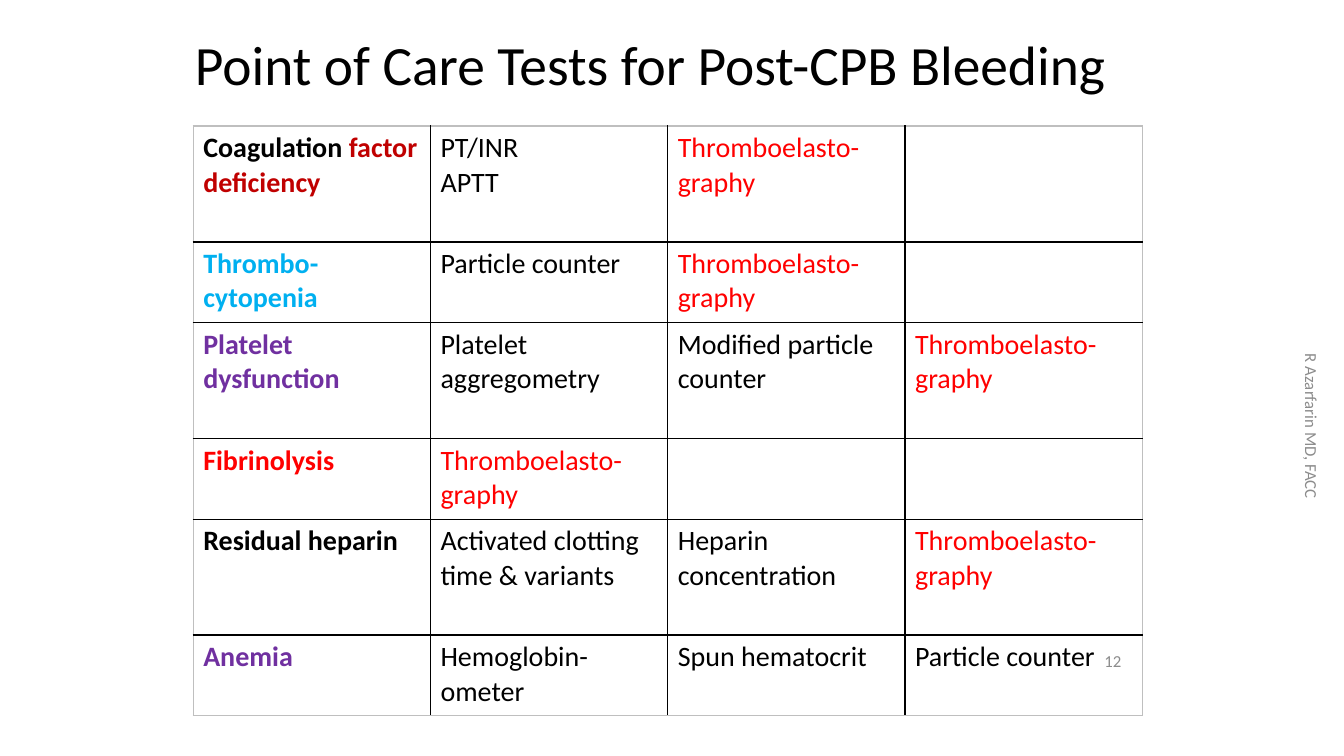
from lxml.etree import SubElement
from pptx import Presentation
from pptx.dml.color import RGBColor
from pptx.enum.text import MSO_ANCHOR, PP_ALIGN
from pptx.oxml.ns import qn
from pptx.util import Pt

BLACK = RGBColor(0x00, 0x00, 0x00)
RED = RGBColor(0xFF, 0x00, 0x00)
DARK_RED = RGBColor(0xC0, 0x00, 0x00)
BLUE = RGBColor(0x00, 0xB0, 0xF0)
PURPLE = RGBColor(0x70, 0x30, 0xA0)
GREY = RGBColor(0x8C, 0x8C, 0x8C)
EDGE = RGBColor(0xBF, 0xBF, 0xBF)

TEG = "Thromboelasto-graphy"
TESTS = [
    ([("Coagulation ", BLACK), ("factor deficiency", DARK_RED)], ["PT/INR\nAPTT", TEG, ""]),
    ([("Thrombo-cytopenia", BLUE)], ["Particle counter", TEG, ""]),
    ([("Platelet dysfunction", PURPLE)],
     ["Platelet aggregometry", "Modified particle counter", TEG]),
    ([("Fibrinolysis", RED)], [TEG, "", ""]),
    ([("Residual heparin", BLACK)],
     ["Activated clotting time & variants", "Heparin concentration", TEG]),
    ([("Anemia", PURPLE)], ["Hemoglobin-ometer", "Spun hematocrit", "Particle counter"]),
]
ROW_HEIGHTS = [82.8, 57.6]
COL_WIDTH = 169.5


def style_font(font, size, color, bold=False):
    for name, value in {"name": "Calibri", "size": Pt(size), "bold": bold}.items():
        setattr(font, name, value)
    font.color.rgb = color


def place(sp, x, y, w, h):
    for name, value in {"left": x, "top": y, "width": w, "height": h}.items():
        setattr(sp, name, Pt(value))


def add_title(s, text, x, y, w, h):
    sp = s.shapes.title
    place(sp, x, y, w, h)
    tf = sp.text_frame
    tf.text = text
    tf.vertical_anchor = MSO_ANCHOR.MIDDLE
    p = tf.paragraphs[0]
    p.alignment = PP_ALIGN.LEFT
    p.line_spacing = 0.9
    style_font(p.runs[0].font, 39.6, BLACK)


def add_label(s, text, x, y, w, h, align, rotation=0):
    sp = s.shapes.add_textbox(Pt(x), Pt(y), Pt(w), Pt(h))
    sp.rotation = rotation
    tf = sp.text_frame
    tf.word_wrap = True
    tf.vertical_anchor = MSO_ANCHOR.MIDDLE
    p = tf.paragraphs[0]
    p.alignment = align
    r = p.add_run()
    r.text = text
    style_font(r.font, 12, GREY)


def set_borders(cell, row, col, rows, cols):
    tcPr = cell._tc.get_or_add_tcPr()
    outer = {"lnL": col == 0, "lnR": col == cols - 1, "lnT": row == 0, "lnB": row == rows - 1}
    for side, is_edge in outer.items():
        ln = SubElement(tcPr, qn(f"a:{side}"), w=str(Pt(1)))
        fill = SubElement(ln, qn("a:solidFill"))
        SubElement(fill, qn("a:srgbClr"), val=str(EDGE if is_edge else BLACK))


def fill_cell(cell, paragraphs, bold):
    tf = cell.text_frame
    for i, runs in enumerate(paragraphs):
        p = tf.paragraphs[0] if i == 0 else tf.add_paragraph()
        for text, color in runs:
            r = p.add_run()
            r.text = text
            style_font(r.font, 20, color, bold)


def add_test_table(s, x, y):
    rows, cols = len(TESTS), 4
    heights = [ROW_HEIGHTS[i % 2] for i in range(rows)]
    frame = s.shapes.add_table(rows, cols, Pt(x), Pt(y), Pt(COL_WIDTH * cols), Pt(sum(heights)))
    table = frame.table
    table.first_row = table.horz_banding = False
    for column in table.columns:
        column.width = Pt(COL_WIDTH)
    for i, (problem, tests) in enumerate(TESTS):
        table.rows[i].height = Pt(heights[i])
        fill_cell(table.cell(i, 0), [problem], True)
        for j, test in enumerate(tests, 1):
            color = RED if test == TEG else BLACK
            if test:
                fill_cell(table.cell(i, j), [[(line, color)] for line in test.split("\n")], False)
        for j in range(cols):
            cell = table.cell(i, j)
            set_borders(cell, i, j, rows, cols)
            cell.fill.background()


def main():
    prs = Presentation()
    prs.slide_width, prs.slide_height = Pt(960), Pt(540)
    s = prs.slides.add_slide(prs.slide_layouts[5])
    add_title(s, "Point of Care Tests for Post-CPB Bleeding", 132, 24, 696, 48)
    add_test_table(s, 138, 90)
    add_label(s, "12", 760, 451.5, 48, 41, PP_ALIGN.RIGHT)
    add_label(s, "R Azarfarin MD, FACC", 811, 290, 252, 29, PP_ALIGN.CENTER, 90)
    prs.save("out.pptx")


if __name__ == "__main__":
    main()
